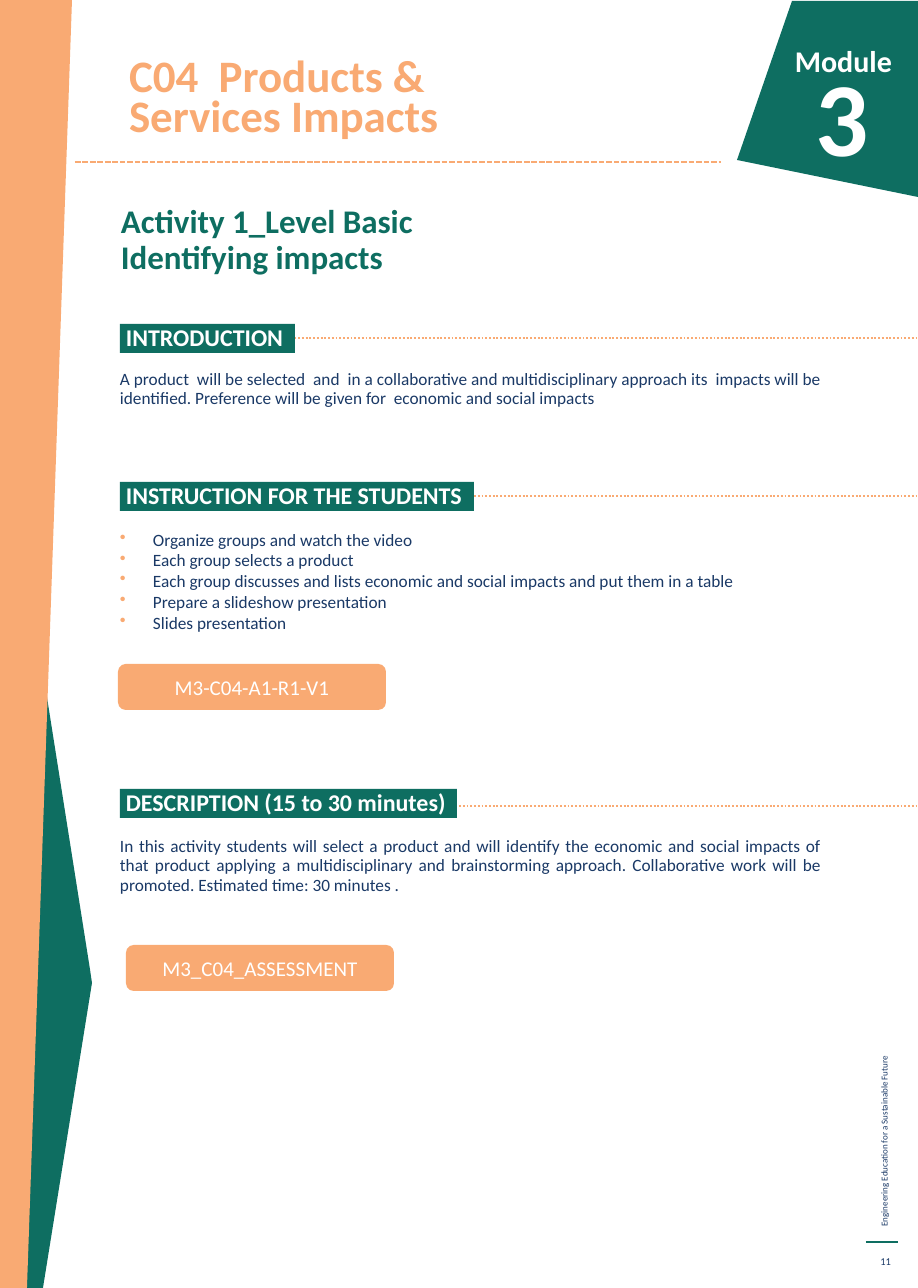
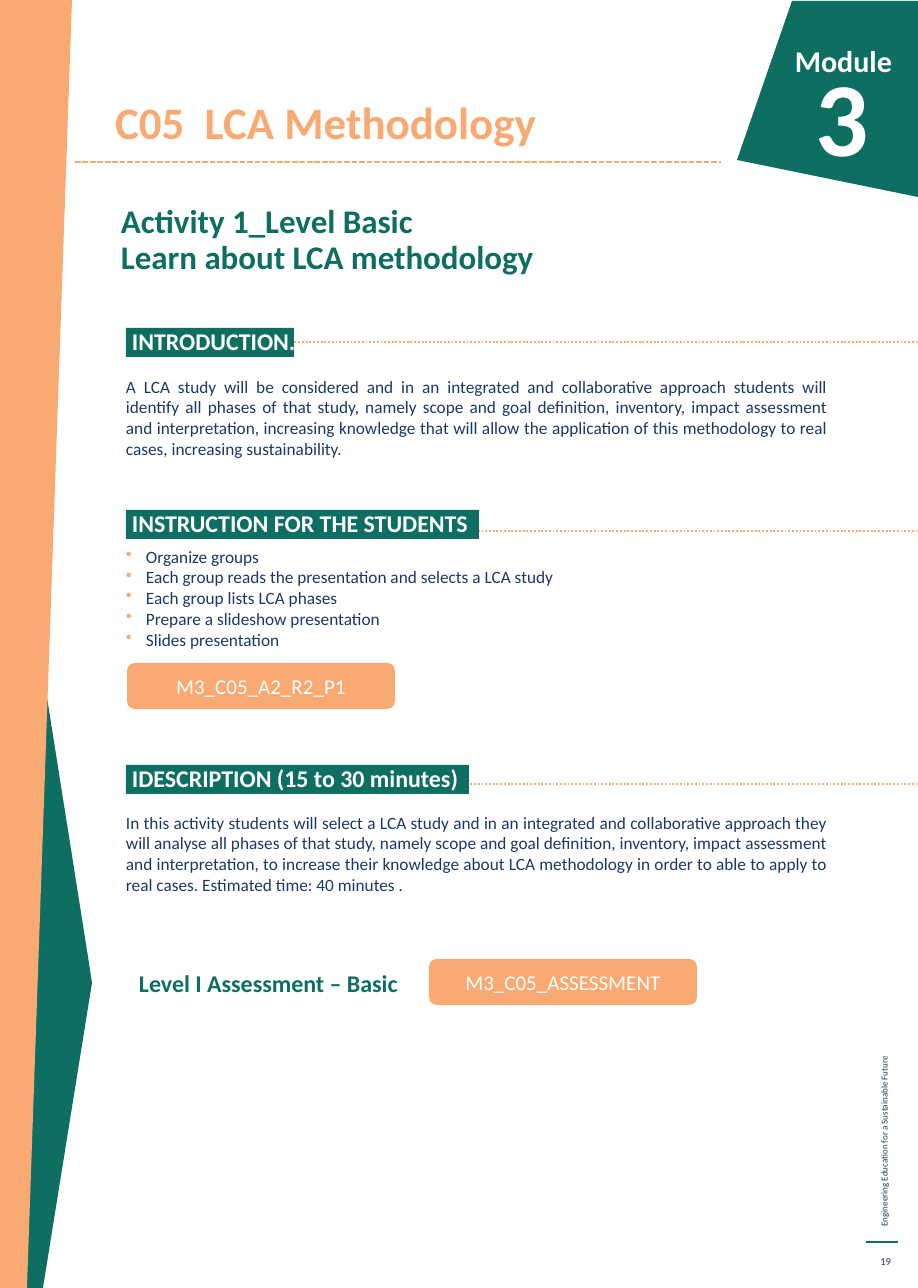
from lxml import etree
from pptx import Presentation
from pptx.dml.color import RGBColor
from pptx.enum import dml, shapes, text
from pptx.oxml import ns
from pptx.util import Emu, Pt

EMU_PER_PX = 914400 / 108
WIDTH, HEIGHT = 918, 1288
TEXT_WIDTH = 701
FONT = "Calibri"
COLORS = {
    "green": "0E6E61",
    "orange": "F9AA73",
    "navy": "1A3966",
    "white": "FFFFFF",
}
LEFT, CENTER, RIGHT, JUSTIFY = (
    text.PP_ALIGN.LEFT, text.PP_ALIGN.CENTER, text.PP_ALIGN.RIGHT, text.PP_ALIGN.JUSTIFY)
TOP, MIDDLE, BOTTOM = (
    text.MSO_ANCHOR.TOP, text.MSO_ANCHOR.MIDDLE, text.MSO_ANCHOR.BOTTOM)
INSET = (11, 5, 11, 5)
NO_INSET = (0, 0, 0, 0)

ACTIVITIES = [
    {
        "page": "11",
        "title": ("C04  Products &\vServices Impacts", (118, 20, 602, 127)),
        "subtitle": "Activity 1_Level Basic\vIdentifying impacts",
        "left": 120,
        "headings": [  # text, top, bar width, rule height
            ("INTRODUCTION", 324, 175, 338),
            ("INSTRUCTION FOR THE STUDENTS", 482, 354, 496),
            ("DESCRIPTION (15 to 30 minutes)", 789, 337, 806),
        ],
        "spacing": Pt(12.8),
        "paragraphs": [
            (370, "A product  will be selected  and  in a collaborative and "
                  "multidisciplinary approach its  impacts will be identified. "
                  "Preference will be given for  economic and social impacts"),
            (837, "In this activity students will select a product and will identify "
                  "the economic and social impacts of that product applying a "
                  "multidisciplinary and brainstorming approach. Collaborative work "
                  "will be promoted. Estimated time: 30 minutes ."),
        ],
        "steps_top": 529,
        "indent": 33,
        "steps": [
            "Organize groups and watch the video",
            "Each group selects a product",
            "Each group discusses and lists economic and social impacts and put "
            "them in a table",
            "Prepare a slideshow presentation",
            "Slides presentation",
        ],
        "buttons": [("M3-C04-A1-R1-V1", 118, 664), ("M3_C04_ASSESSMENT", 126, 945)],
    },
    {
        "page": "19",
        "title": ("C05  LCA Methodology", (104, 41, 579, 113)),
        "subtitle": "Activity 1_Level Basic\vLearn about LCA methodology",
        "left": 126,
        "headings": [
            ("INTRODUCTION.", 328, 168, 342),
            ("INSTRUCTION FOR THE STUDENTS", 510, 353, 531),
            ("IDESCRIPTION (15 to 30 minutes)", 765, 343, 784),
        ],
        "spacing": 1.0,
        "paragraphs": [
            (376, "A LCA study will be considered and in an integrated and "
                  "collaborative approach students will identify all phases of that "
                  "study, namely scope and goal definition, inventory, impact "
                  "assessment and interpretation, increasing knowledge that will "
                  "allow the application of this methodology to real cases, "
                  "increasing sustainability."),
            (812, "In this activity students will select a LCA study and in an "
                  "integrated and collaborative approach they will analyse all phases "
                  "of that study, namely scope and goal definition, inventory, impact "
                  "assessment and interpretation, to increase their knowledge about "
                  "LCA methodology in order to able to apply to real cases. "
                  "Estimated time: 40 minutes ."),
        ],
        "steps_top": 546,
        "indent": 20,
        "steps": [
            "Organize groups",
            "Each group reads the presentation and selects a LCA study",
            "Each group lists LCA phases",
            "Prepare a slideshow presentation",
            "Slides presentation",
        ],
        "buttons": [("M3_C05_A2_R2_P1", 127, 663), ("M3_C05_ASSESSMENT", 429, 959)],
        "label": "Level I Assessment – Basic",
    },
]


def px(n):
    return Emu(round(n * EMU_PER_PX))


def rgb(name):
    return RGBColor.from_string(COLORS[name])


def paint(shape, color):
    shape.fill.solid()
    shape.fill.fore_color.rgb = rgb(color)
    shape.line.fill.background()
    shape.shadow.inherit = False


def add_bullet(p, indent):
    """Give a paragraph a hanging orange bullet."""
    pPr = p._p.get_or_add_pPr()
    pPr.set("marL", str(px(indent)))
    pPr.set("indent", str(-px(indent)))
    color = etree.SubElement(pPr, ns.qn("a:buClr"))
    etree.SubElement(color, ns.qn("a:srgbClr"), val=COLORS["orange"])
    etree.SubElement(pPr, ns.qn("a:buChar"), char="•")


def write(shape, content, size=11.5, color="navy", bold=False, align=LEFT,
          anchor=TOP, inset=INSET, spacing=1.0, bullet=None, wrap=True):
    """Fill a shape with one paragraph, or one for each item of a list."""
    tf = shape.text_frame
    tf.word_wrap = wrap
    tf.auto_size = text.MSO_AUTO_SIZE.NONE
    tf.vertical_anchor = anchor
    tf.margin_left, tf.margin_top, tf.margin_right, tf.margin_bottom = map(px, inset)
    lines = [content] if isinstance(content, str) else content
    for i, line in enumerate(lines):
        p = tf.paragraphs[0] if i == 0 else tf.add_paragraph()
        p.text = line
        p.alignment = align
        p.line_spacing = spacing
        p.space_before = Pt(0)
        if bullet:
            add_bullet(p, bullet)
        for r in p.runs:
            r.font.name = FONT
            r.font.size = Pt(size)
            r.font.bold = bold
            r.font.color.rgb = rgb(color)


def add_text(s, box, content, **style):
    shape = s.shapes.add_textbox(*map(px, box))
    write(shape, content, **style)
    return shape


def add_rule(s, x1, x2, y, color="orange", width=1.25, dash=None):
    line = s.shapes.add_connector(
        shapes.MSO_CONNECTOR.STRAIGHT, px(x1), px(y), px(x2), px(y))
    line.line.color.rgb = rgb(color)
    line.line.width = Pt(width)
    if dash:
        line.line.dash_style = dash
    etree.SubElement(line._element.spPr, ns.qn("a:effectLst"))


def add_polygon(s, color, points):
    start, *rest = [(px(x), px(y)) for x, y in points]
    builder = s.shapes.build_freeform(*start)
    builder.add_line_segments(rest, close=True)
    paint(builder.convert_to_shape(), color)


def add_heading(s, left, label, top, width, rule_y):
    add_rule(s, 272, WIDTH, rule_y, dash=dml.MSO_LINE.ROUND_DOT)
    bar = s.shapes.add_shape(
        shapes.MSO_SHAPE.RECTANGLE, *map(px, (left, top, width, 29)))
    paint(bar, "green")
    write(bar, label, size=16, color="white", bold=True, anchor=MIDDLE,
          inset=(6, 0, 0, 3), wrap=False)


def add_button(s, label, left, top):
    button = s.shapes.add_shape(
        shapes.MSO_SHAPE.ROUNDED_RECTANGLE, *map(px, (left, top, 268, 46)))
    paint(button, "orange")
    write(button, label, size=14, color="white", align=CENTER, anchor=MIDDLE)


def add_page_frame(s, page):
    """Draw the side band, module badge, title rule and footer of every page."""
    add_polygon(s, "green", [(43, HEIGHT), (25, HEIGHT), (25, 558), (90, 969), (92, 983)])
    add_polygon(s, "orange", [(0, 0), (72, 0), (27, HEIGHT), (0, HEIGHT)])
    add_polygon(s, "green", [(WIDTH, 1), (792, 1), (737, 160), (WIDTH, 197)])
    badge = {"color": "white", "bold": True, "align": RIGHT}
    add_text(s, (709, 37, 194, 60), "Module", size=20, **badge)
    add_text(s, (686, 47, 194, 153), "3", size=70, **badge)
    add_rule(s, 75, 721, 162, dash=dml.MSO_LINE.SQUARE_DOT)
    footer = add_text(s, (642, 984, 485, 22),
                      "Engineering Education for a Sustainable Future", size=6)
    footer.rotation = 270
    add_rule(s, 866, 898, 1242, color="green", width=0.75)
    add_text(s, (866, 1246, 36, 31), page, size=7, align=RIGHT, anchor=MIDDLE)


def add_activity(prs, activity):
    s = prs.slides.add_slide(prs.slide_layouts[5])
    add_page_frame(s, activity["page"])

    title, box = activity["title"]
    holder = s.shapes.title
    holder.left, holder.top, holder.width, holder.height = map(px, box)
    write(holder, title, size=30, color="orange", bold=True, anchor=BOTTOM,
          spacing=Pt(26.8))
    add_text(s, (110, 200, 553, 113), activity["subtitle"], size=22, color="green",
             bold=True, spacing=0.9)

    left = activity["left"]
    for heading in activity["headings"]:
        add_heading(s, left, *heading)
    for top, body in activity["paragraphs"]:
        add_text(s, (left, top, TEXT_WIDTH, 84), body, align=JUSTIFY,
                 inset=NO_INSET, spacing=activity["spacing"])
    add_text(s, (left, activity["steps_top"], TEXT_WIDTH, 105), activity["steps"],
             align=JUSTIFY, inset=NO_INSET, bullet=activity["indent"])
    for button in activity["buttons"]:
        add_button(s, *button)
    if "label" in activity:
        add_text(s, (128, 967, 295, 40), activity["label"], size=16, color="green",
                 bold=True, spacing=0.9)


def main():
    prs = Presentation()
    prs.slide_width, prs.slide_height = px(WIDTH), px(HEIGHT)
    for activity in ACTIVITIES:
        add_activity(prs, activity)
    prs.save("out.pptx")


if __name__ == "__main__":
    main()
